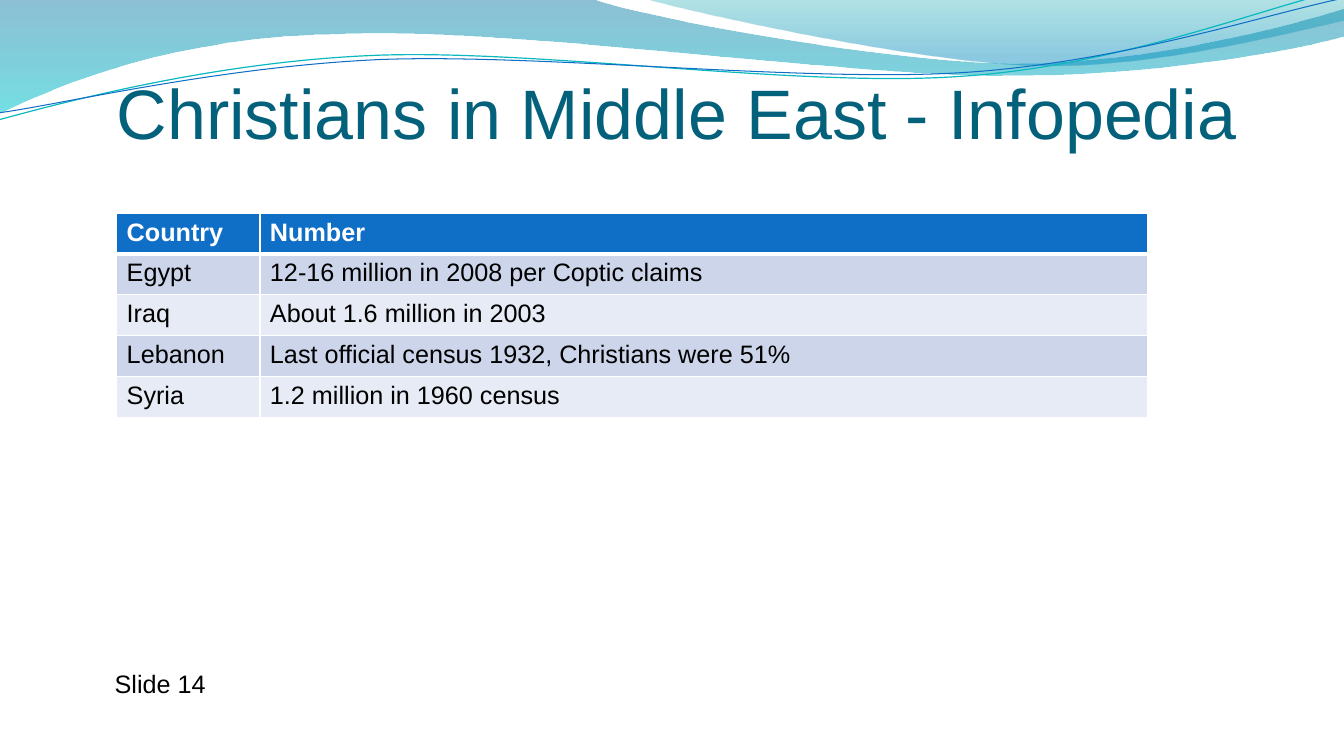
from pptx import Presentation, util as u
from pptx.dml.color import RGBColor
from pptx.enum import text
from pptx.oxml import parse_xml
from pptx.oxml.ns import nsdecls


def color(value):
    return RGBColor.from_string(value)


def add_wave(shapes, start, segments, close):
    """Draw a path whose segments are line ends (x, y) or cubic curves (6 numbers)."""
    points = [(u.Cm(x), u.Cm(y)) for segment in segments
              for x, y in zip(segment[::2], segment[1::2])]
    builder = shapes.build_freeform(u.Cm(start[0]), u.Cm(start[1]), scale=1.0)
    builder.add_line_segments(points, close=close)
    wave = builder.convert_to_shape()
    wave.shadow.inherit = False
    # Join the three points of each cubic curve into one curve element
    lines = iter(wave._element.xpath(".//a:lnTo"))
    for segment in segments:
        nodes = [next(lines) for _ in segment[::2]]
        if len(nodes) == 3:
            cubic = parse_xml(f'<a:cubicBezTo {nsdecls("a")}/>')
            nodes[0].addprevious(cubic)
            for node in nodes:
                cubic.append(node[0])
                node.getparent().remove(node)
    return wave


presentation = Presentation()
presentation.slide_width = u.Cm(33.87)
presentation.slide_height = u.Cm(19.05)
slide = presentation.slides.add_slide(presentation.slide_layouts[6])

# Translucent gradient waves: start, segments, stops (position, colour, opacity %)
bands = [
    ((0, 0),
     [(14.91, -0.03), (16.1, 0.43, 22.48, 1.6, 25.68, 1.6),
      (28.91, 1.6, 32.46, 0.66, 33.86, 0.23), (33.91, 0.91),
      (33.3, 1.12, 29.46, 1.93, 25.25, 1.91), (21.06, 1.91, 12.93, 0.71, 8.71, 0.86),
      (4.37, 0.91, 1.55, 2.11, -0.03, 2.87)],
     [(0, "0074A1", 45), (1, "00C6CF", 55)]),
    ((16.23, -0.03),
     [(17.25, 0.28, 23.09, 1.57, 26.04, 1.65),
      (28.98, 1.75, 32.56, 0.81, 33.86, 0.53), (33.86, 0)],
     [(0, "00A1A9", 30), (0.8, "008BBF", 45)]),
]
for start, segments, stops in bands:
    band = add_wave(slide.shapes, start, segments, True)
    band.line.fill.background()
    band.fill.gradient()
    band.fill.gradient_angle = 270
    for stop, (position, value, opacity) in zip(band.fill.gradient_stops, stops):
        stop.position = position
        stop.color.rgb = color(value)
    for element, (position, value, opacity) in zip(
            band._element.xpath(".//a:gs/a:srgbClr"), stops):
        element.append(parse_xml(f'<a:alpha {nsdecls("a")} val="{opacity * 1000}"/>'))

# Thin wave lines: start, segments, colour, width
curves = [
    ((-0.03, 3.02),
     [(1.63, 2.57, 5.36, 1.57, 9.37, 1.4), (13.39, 1.22, 20.07, 2.21, 24.13, 1.93),
      (28.19, 1.68, 31.8, 0.2, 33.81, -0.25)], "0AB8BF", 0.85),
    ((0, 2.84),
     [(1.6, 2.62, 5.54, 1.68, 9.6, 1.5), (13.64, 1.35, 20.22, 2.08, 24.26, 1.83),
      (28.32, 1.57, 31.88, 0.36, 33.88, -0.05)], "0F6FC6", 0.75),
]
for start, segments, value, width in curves:
    curve = add_wave(slide.shapes, start, segments, False)
    curve.fill.background()
    curve.line.color.rgb = color(value)
    curve.line.width = u.Pt(width)

# Title and slide number: words, box, size, colour, anchor, side inset
labels = [
    ("Christians in Middle East - Infopedia", (2.94, 0.69, 30.48, 3.18),
     50, "04617B", text.MSO_ANCHOR.BOTTOM, 0),
    ("Slide 14", (2.64, 16.71, 3, 1.02), 18, "000000", text.MSO_ANCHOR.TOP, 0.25),
]
for words, box, size, value, anchor, inset in labels:
    frame = slide.shapes.add_textbox(*map(u.Cm, box)).text_frame
    frame.word_wrap = True
    frame.vertical_anchor = anchor
    frame.margin_left = frame.margin_right = u.Cm(inset)
    if anchor == text.MSO_ANCHOR.BOTTOM:
        frame.margin_bottom = 0
    run = frame.paragraphs[0].add_run()
    run.text = words
    run.font.name = "Arial"
    run.font.size = u.Pt(size)
    run.font.color.rgb = color(value)

# Table of Christians by country
rows = [
    ("Country", "Number"),
    ("Egypt", "12-16 million in 2008 per Coptic claims"),
    ("Iraq", "About 1.6 million in 2003"),
    ("Lebanon", "Last official census 1932, Christians were 51%"),
    ("Syria", "1.2 million in 1960 census"),
]
column_widths = (3.61, 22.38)
row_height = 1.03
table = slide.shapes.add_table(
    len(rows), 2, u.Cm(2.94), u.Cm(5.37),
    u.Cm(sum(column_widths)), u.Cm(row_height * len(rows))).table
for column, width in zip(table.columns, column_widths):
    column.width = u.Cm(width)
for row_index, row in enumerate(rows):
    header = row_index == 0
    fill = "0F6FC6" if header else ("E7EBF5", "CCD5EA")[row_index % 2]
    for column_index, words in enumerate(row):
        cell = table.cell(row_index, column_index)
        run = cell.text_frame.paragraphs[0].add_run()
        run.text = words
        run.font.name = "Arial"
        run.font.size = u.Pt(18)
        run.font.bold = header
        run.font.color.rgb = color("FFFFFF" if header else "000000")
        # Borders come before the fill in the cell properties
        properties = cell._tc.get_or_add_tcPr()
        for side in "LRTB":
            thick = (side == "B" and header) or (side == "T" and row_index == 1)
            properties.append(parse_xml(
                f'<a:ln{side} {nsdecls("a")} w="{u.Pt(3 if thick else 1)}"><a:solidFill>'
                f'<a:srgbClr val="FFFFFF"/></a:solidFill></a:ln{side}>'))
        cell.fill.solid()
        cell.fill.fore_color.rgb = color(fill)

presentation.save("out.pptx")
